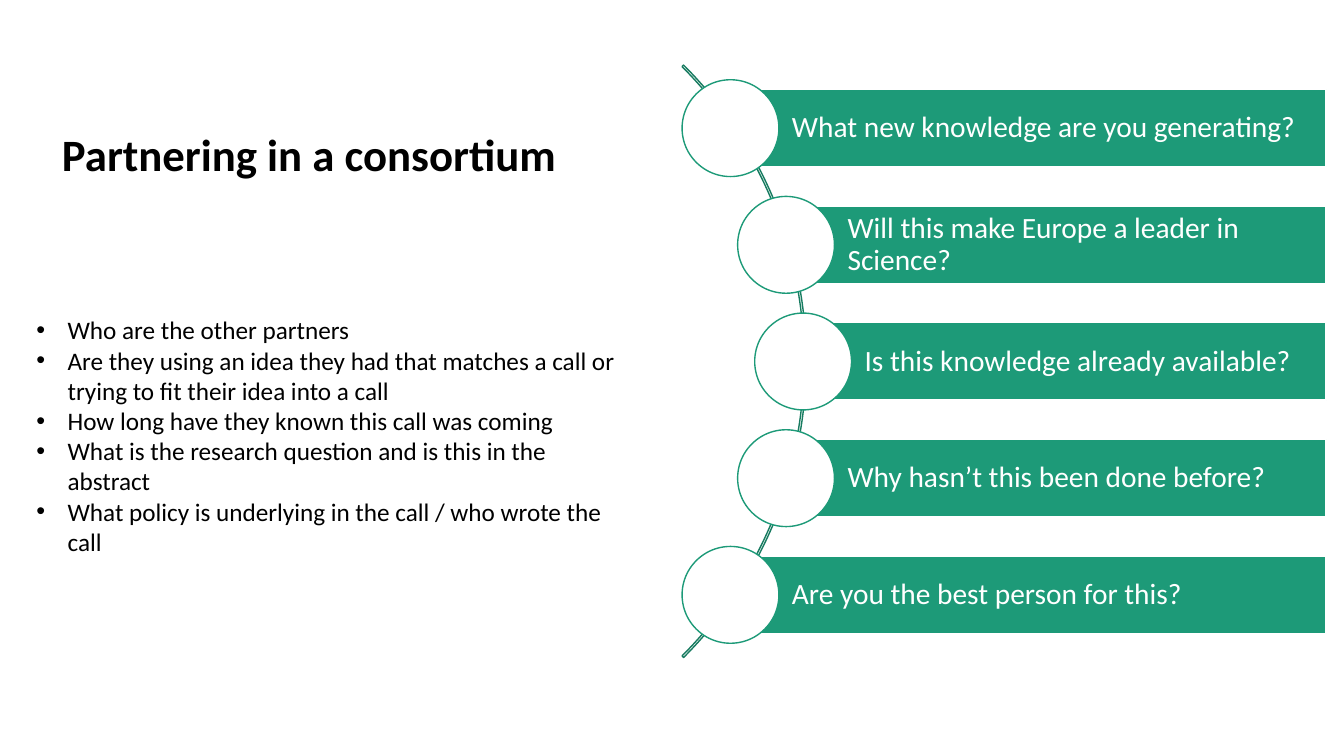
from pptx import Presentation
from pptx.dml.color import RGBColor
from pptx.enum.shapes import MSO_SHAPE
from pptx.enum.text import MSO_ANCHOR, MSO_AUTO_SIZE, PP_ALIGN
from pptx.oxml.ns import qn
from pptx.util import Cm, Pt
from lxml.etree import SubElement

GREEN = RGBColor(0x1D, 0x9A, 0x78)
DARK_GREEN = RGBColor(0x17, 0x7B, 0x60)
WHITE = RGBColor(0xFF, 0xFF, 0xFF)
BLACK = RGBColor(0, 0, 0)

PARTNER_POINTS = [
    "Who are the other partners",
    "Are they using an idea they had that matches a call or trying to fit their idea into a call",
    "How long have they known this call was coming",
    "What is the research question and is this in the abstract",
    "What policy is underlying in the call / who wrote the call",
]
QUESTIONS = [
    (18.41, "What new knowledge are you generating?"),
    (19.81, "Will this make Europe a leader in Science?"),
    (20.24, "Is this knowledge already available?"),
    (19.81, "Why hasn’t this been done before?"),
    (18.41, "Are you the best person for this?"),
]
FIRST_ROW, ROW_STEP = 3.23, 2.94
BAR_RIGHT, BAR_HEIGHT, CIRCLE = 33.42, 1.95, 2.44


def style_font(font, size, color):
    font.name = "Calibri"
    font.size = Pt(size)
    font.color.rgb = color


def add_shape(kind, left, top, width, height, fill, line):
    sp = s.shapes.add_shape(kind, Cm(left), Cm(top), Cm(width), Cm(height))
    sp.shadow.inherit = False
    if fill is None:
        sp.fill.background()
    else:
        sp.fill.solid()
        sp.fill.fore_color.rgb = fill
    sp.line.color.rgb = line
    sp.line.width = Pt(1)
    return sp


prs = Presentation()
prs.slide_width, prs.slide_height = Cm(33.87), Cm(19.05)
s = prs.slides.add_slide(prs.slide_layouts[1])

title, body = s.shapes.title, s.placeholders[1]
title.left, title.top, title.width, title.height = Cm(1.04), Cm(3.07), Cm(13.51), Cm(1.63)
body.left, body.top, body.width, body.height = Cm(0.66), Cm(7.8), Cm(15.54), Cm(6.4)
for sp in (title, body):
    tf = sp.text_frame
    tf.word_wrap = True
    tf.auto_size = MSO_AUTO_SIZE.NONE
    tf.vertical_anchor = MSO_ANCHOR.TOP

title.text_frame.text = "Partnering in a consortium"
p = title.text_frame.paragraphs[0]
p.alignment = PP_ALIGN.CENTER
style_font(p.runs[0].font, 32, BLACK)
p.runs[0].font.bold = True

tf = body.text_frame
tf.text = "\n".join(PARTNER_POINTS)
for p in tf.paragraphs:
    p.space_before = Pt(0)
    pPr = p._p.get_or_add_pPr()
    pPr.set("marL", str(Cm(0.79)))
    pPr.set("indent", str(-Cm(0.79)))
    SubElement(pPr, qn("a:buFont"), typeface="Arial")
    SubElement(pPr, qn("a:buChar"), char="•")
    style_font(p.runs[0].font, 18, BLACK)

arc = add_shape(MSO_SHAPE.BLOCK_ARC, -0.79, -1.45, 21.11, 21.11, None, DARK_GREEN)
arc.adjustments[0] = 189
arc.adjustments[1] = 27
arc.adjustments[2] = 0.0026

for i, (center_x, question) in enumerate(QUESTIONS):
    center_y = FIRST_ROW + i * ROW_STEP
    bar = add_shape(MSO_SHAPE.RECTANGLE, center_x, center_y - BAR_HEIGHT / 2,
                    BAR_RIGHT - center_x, BAR_HEIGHT, GREEN, WHITE)
    tf = bar.text_frame
    tf.word_wrap = True
    tf.vertical_anchor = MSO_ANCHOR.MIDDLE
    tf.margin_left = Cm(1.55)
    tf.margin_top = tf.margin_right = tf.margin_bottom = Cm(0.15)
    tf.text = question
    p = tf.paragraphs[0]
    p.alignment = PP_ALIGN.LEFT
    p.line_spacing = 0.9
    style_font(p.runs[0].font, 21, WHITE)
    add_shape(MSO_SHAPE.OVAL, center_x - CIRCLE / 2, center_y - CIRCLE / 2,
              CIRCLE, CIRCLE, WHITE, GREEN)

prs.save("out.pptx")
